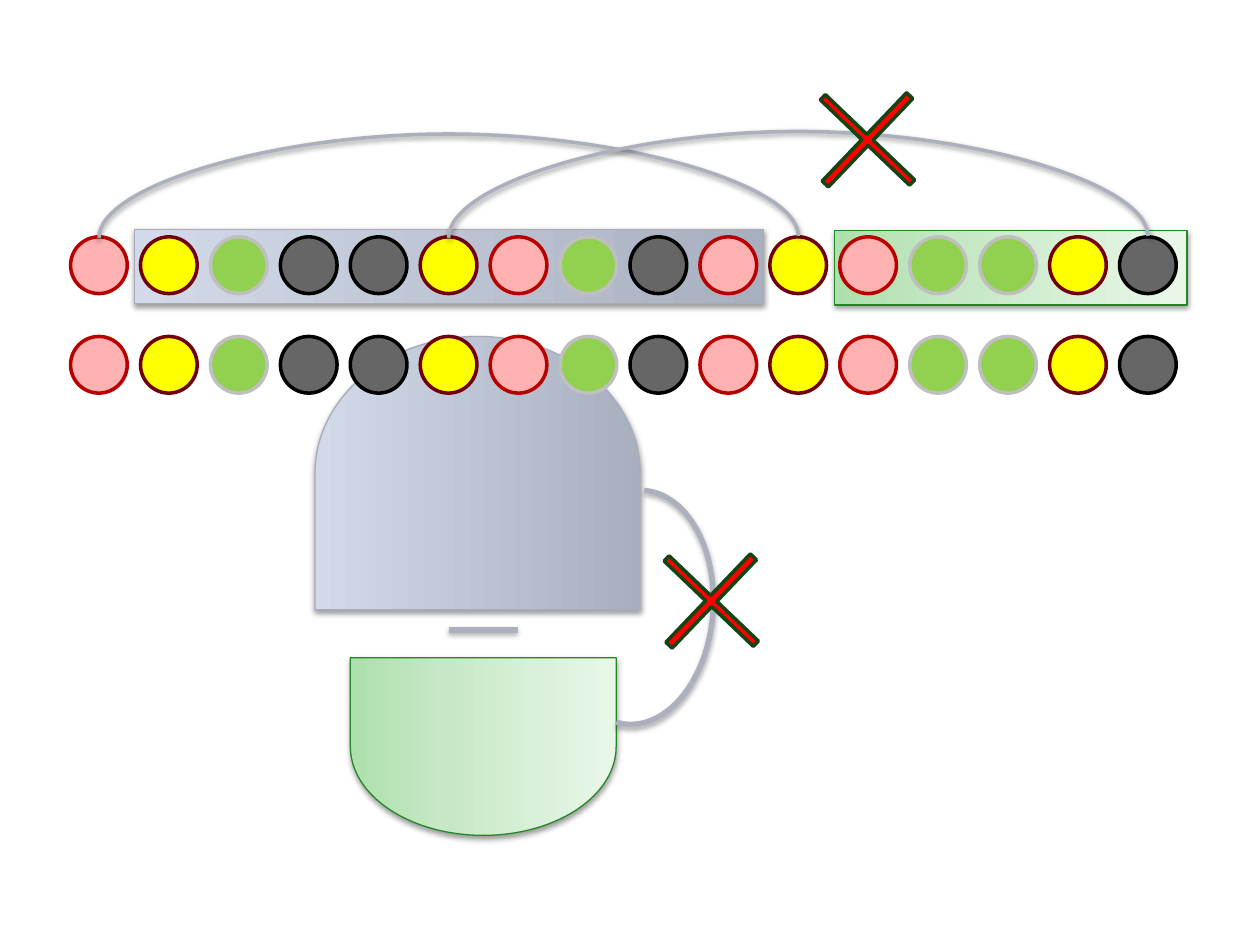
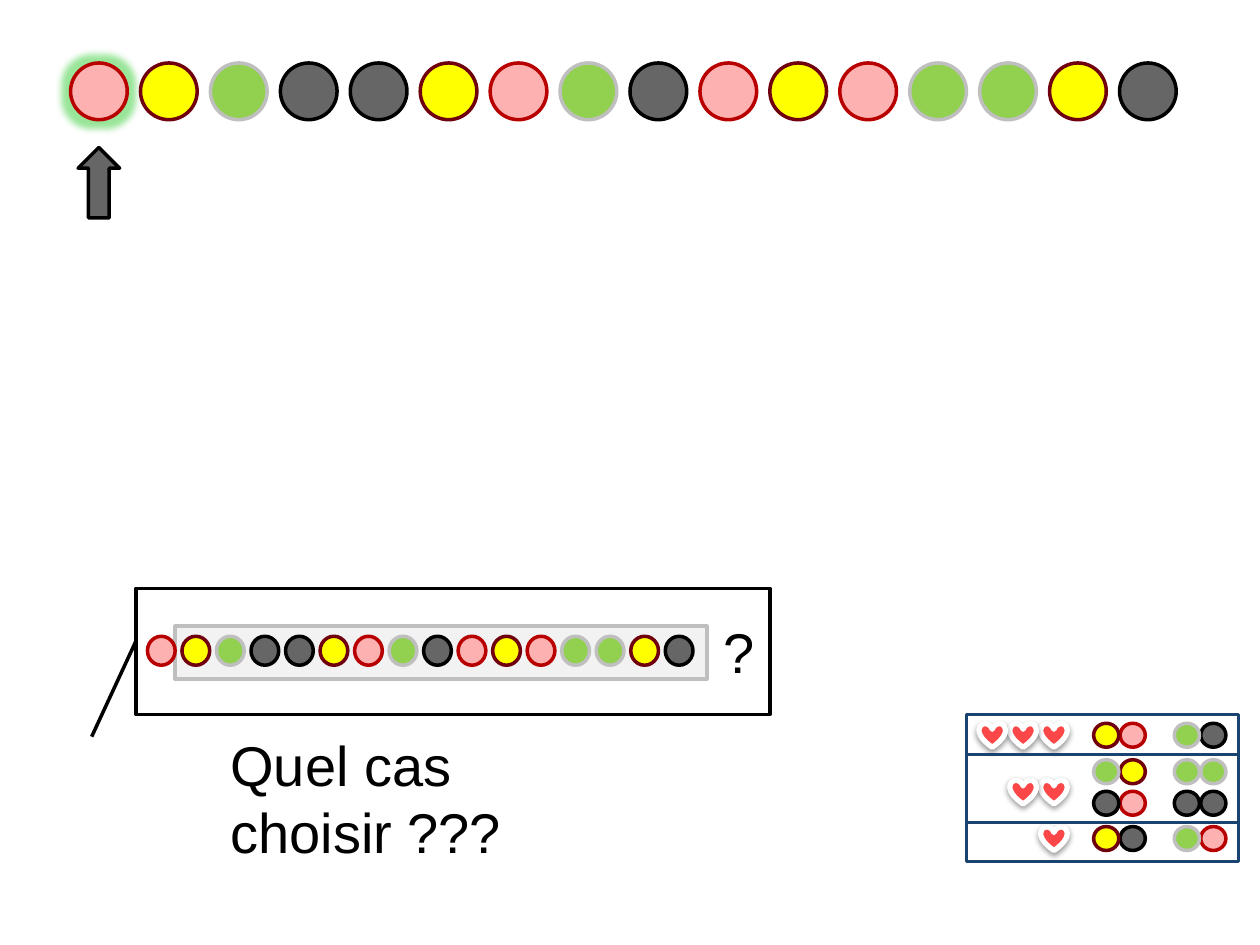
from dataclasses import dataclass

from lxml.etree import SubElement
from pptx import Presentation
from pptx.dml.color import RGBColor
from pptx.enum.shapes import MSO_CONNECTOR, MSO_SHAPE
from pptx.oxml import parse_xml
from pptx.oxml.ns import nsdecls, qn
from pptx.util import Inches, Pt


@dataclass(frozen=True)
class Theme:
    font: str = "Arial"
    text_size: float = 32
    black: str = "000000"
    white: str = "FFFFFF"
    dark: str = "666666"
    pale: str = "F2F2F2"
    silver: str = "BFBFBF"
    link: str = "ABB0BC"
    navy: str = "194472"
    heart: str = "FB4747"
    cross: str = "FF0000"
    cross_edge: str = "144414"
    glow: str = "33CC33"
    thin: float = 0.75
    rule: float = 1.5
    medium: float = 2
    thick: float = 3


THEME = Theme()

# Base letter -> fill and outline
BASES = {
    "P": ("FDB1B1", "B80000"),
    "Y": ("FFFF00", "70000D"),
    "G": ("92D050", THEME.silver),
    "K": (THEME.dark, THEME.black),
}
SEQUENCE = "PYGKKYPGKPYPGGYK"

# Gradient stops (percent, colour) and outline
GREEN = ([(0, "ADE0AD"), (35, "C6E8C6"), (100, "E9F7E9")], "248726")
BLUE = ([(0, "A8AFBF"), (100, "D2D9E9")], "A7ACB8")

# Shape, box as seen (left, top, width, height), rotation, colours
REGIONS = [
    (MSO_SHAPE.RECTANGLE, (6.62, 1.83, 2.8, 0.59), 90, GREEN),
    (MSO_SHAPE.RECTANGLE, (1.07, 1.82, 4.99, 0.59), 270, BLUE),
    (MSO_SHAPE.FLOWCHART_DELAY, (2.78, 5.22, 2.11, 1.41), 90, GREEN),
    (MSO_SHAPE.FLOWCHART_DELAY, (2.5, 2.67, 2.58, 2.17), 270, BLUE),
]
# Paired base numbers and height of the curve above them
PAIRINGS = [(0, 10, 0.83), (5, 15, 0.85)]
CROSSES = [(5.16, 4.28), (6.4, 0.62)]

# Score legend: top of the row, hearts, then base pairs
LEGEND_ROWS = [
    (5.74, 3, ("YP", "GK")),
    (6.03, 0, ("GY", "GG")),
    (6.19, 2, ()),
    (6.28, 0, ("KP", "KK")),
    (6.56, 1, ("YK", "GP")),
]
LEGEND_BOX = (7.67, 5.67, 2.16, 1.17)
LEGEND_RULES = (5.99, 6.53)
PAIR_LEFTS = (8.68, 9.32)


def rgb(code):
    return RGBColor.from_string(code)


def add_effect(properties, tag, color, alpha, **attributes):
    effects = properties.find(qn("a:effectLst"))
    if effects is None:
        effects = SubElement(properties, qn("a:effectLst"))
    effect = SubElement(effects, qn(f"a:{tag}"), {k: str(v) for k, v in attributes.items()})
    tint = SubElement(effect, qn("a:srgbClr"), val=color)
    SubElement(tint, qn("a:alpha"), val=str(alpha * 1000))


def add_shadow(item, alpha=38):
    add_effect(item._element.spPr, "outerShdw", THEME.black, alpha,
               blurRad=40000, dist=20000, dir=5400000, rotWithShape=0)


def add_shape(shapes, kind, box, fill, line, weight, rotation=0, adjustments=()):
    shape = shapes.add_shape(kind, *map(Inches, box))
    shape.rotation = rotation
    shape.shadow.inherit = False
    if fill:
        shape.fill.solid()
        shape.fill.fore_color.rgb = rgb(fill)
    else:
        shape.fill.background()
    shape.line.color.rgb = rgb(line)
    shape.line.width = Pt(weight)
    for index, value in enumerate(adjustments):
        shape.adjustments[index] = value
    return shape


def add_line(shapes, kind, start, end, color, weight):
    line = shapes.add_connector(kind, *map(Inches, start + end))
    line.line.color.rgb = rgb(color)
    line.line.width = Pt(weight)
    SubElement(line._element.spPr, qn("a:effectLst"))
    return line


def add_ball(shapes, base, left, top, width, height):
    return add_shape(shapes, MSO_SHAPE.OVAL, (left, top, width, height), *BASES[base], THEME.medium)


def add_sequence(shapes, left, top, pitch, width, height):
    return [add_ball(shapes, base, left + index * pitch, top, width, height)
            for index, base in enumerate(SEQUENCE)]


def add_main_sequence(slide, top):
    return add_sequence(slide.shapes, 0.56, top, 0.555, 0.45, 0.45)


def add_region(slide, kind, box, rotation, colors):
    """Place a quarter-turned shape so that it covers the given box."""
    left, top, width, height = box
    shift = (width - height) / 2
    stops, outline = colors
    frame = (left + shift, top - shift, height, width)
    shape = add_shape(slide.shapes, kind, frame, THEME.white, outline, THEME.thin, rotation)
    marks = "".join(f'<a:gs pos="{position * 1000}"><a:srgbClr val="{color}"/></a:gs>'
                    for position, color in stops)
    properties = shape._element.spPr
    properties.replace(properties.find(qn("a:solidFill")), parse_xml(
        f'<a:gradFill {nsdecls("a")} rotWithShape="1"><a:gsLst>{marks}</a:gsLst>'
        '<a:lin ang="16200000" scaled="0"/></a:gradFill>'))
    add_shadow(shape)


def add_pairing(slide, first, last, rise):
    """Join the tops of two balls with a curve that rises above them."""
    curve = add_line(slide.shapes, MSO_CONNECTOR.CURVE, (0, 0), (1, 1), THEME.link, THEME.medium)
    curve.begin_connect(first, 0)
    curve.end_connect(last, 0)
    depth = Pt(1)
    span = last.left - first.left
    center = first.left + (first.width + span) // 2
    curve.left, curve.top = center - depth // 2, first.top - span // 2
    curve.width, curve.height = depth, span
    properties = curve._element.spPr
    for name, value in (("rot", "5400000"), ("flipH", "1"), ("flipV", "1")):
        properties.find(qn("a:xfrm")).set(name, value)
    geometry = properties.find(qn("a:prstGeom"))
    guides = geometry.find(qn("a:avLst"))
    if guides is None:
        guides = SubElement(geometry, qn("a:avLst"))
    bend = round(Inches(rise) / depth * 100000)
    SubElement(guides, qn("a:gd"), name="adj1", fmla=f"val {bend}")
    add_shadow(curve)


def add_text(slide, box, text, wrap):
    text_box = slide.shapes.add_textbox(*map(Inches, box))
    text_box.text_frame.word_wrap = wrap
    paragraph = text_box.text_frame.paragraphs[0]
    paragraph.text = text
    paragraph.font.name = THEME.font
    paragraph.font.size = Pt(THEME.text_size)
    paragraph.font.color.rgb = rgb(THEME.black)


def add_legend(slide):
    shapes = slide.shapes.add_group_shape().shapes
    left, _, width, _ = LEGEND_BOX
    add_shape(shapes, MSO_SHAPE.RECTANGLE, LEGEND_BOX, THEME.white, THEME.navy, THEME.rule)
    for top, hearts, pairs in LEGEND_ROWS:
        for pair_left, pair in zip(PAIR_LEFTS, pairs):
            for index in (1, 0):
                add_ball(shapes, pair[index], pair_left + index * 0.21, top, 0.2, 0.19)
        for index in range(hearts):
            heart = add_shape(shapes, MSO_SHAPE.HEART, (8.26 - index * 0.245, top, 0.21, 0.19),
                              THEME.heart, THEME.white, THEME.thick)
            add_shadow(heart)
    for top in LEGEND_RULES:
        add_line(shapes, MSO_CONNECTOR.STRAIGHT, (left, top), (left + width, top),
                 THEME.navy, THEME.rule)


def build_crossing_slide(slide):
    # Regions and the bar between them
    for region in REGIONS:
        add_region(slide, *region)
    bar = add_line(slide.shapes, MSO_CONNECTOR.STRAIGHT, (3.56, 5), (4.11, 5),
                   THEME.link, THEME.thick)
    add_shadow(bar, 35)

    # Sequences and pairings
    balls = add_main_sequence(slide, 1.88)
    add_main_sequence(slide, 2.67)
    for first, last, rise in PAIRINGS:
        add_pairing(slide, balls[first], balls[last], rise)
    arc = add_shape(slide.shapes, MSO_SHAPE.ARC, (4.43, 3.89, 1.23, 1.86), None,
                    THEME.link, THEME.thick, 4.2, (162, 57.2))
    add_shadow(arc, 35)

    # Forbidden links
    for left, top in CROSSES:
        add_shape(slide.shapes, MSO_SHAPE.CROSS, (left, top, 0.97, 0.98), THEME.cross,
                  THEME.cross_edge, THEME.medium, 313.7, (0.47,))


def build_choice_slide(slide):
    # Callout with the remaining sequence
    add_shape(slide.shapes, MSO_SHAPE.LINE_CALLOUT_1, (1.08, 4.67, 5.03, 1), THEME.white,
              THEME.black, THEME.medium, adjustments=(0.417, 0, 1.177, -0.07))
    add_shape(slide.shapes, MSO_SHAPE.RECTANGLE, (1.39, 4.97, 4.22, 0.42), THEME.pale,
              THEME.silver, THEME.medium)
    add_sequence(slide.shapes, 1.17, 5.05, 0.274, 0.22, 0.23)

    # Main sequence with its current base marked
    current = add_main_sequence(slide, 0.5)[0]
    add_effect(current._element.spPr, "glow", THEME.glow, 50, rad=Pt(8))
    add_shape(slide.shapes, MSO_SHAPE.UP_ARROW, (0.62, 1.17, 0.33, 0.56), THEME.dark,
              THEME.black, THEME.medium)

    # Question and legend
    add_text(slide, (5.64, 4.85, 0.41, 0.64), "?", False)
    add_text(slide, (1.73, 5.75, 3.77, 0.64), "Quel cas choisir ???", True)
    add_legend(slide)


def main():
    presentation = Presentation()
    presentation.slide_width, presentation.slide_height = Inches(10), Inches(7.5)
    for build in (build_crossing_slide, build_choice_slide):
        build(presentation.slides.add_slide(presentation.slide_layouts[6]))
    presentation.save("out.pptx")


if __name__ == "__main__":
    main()
